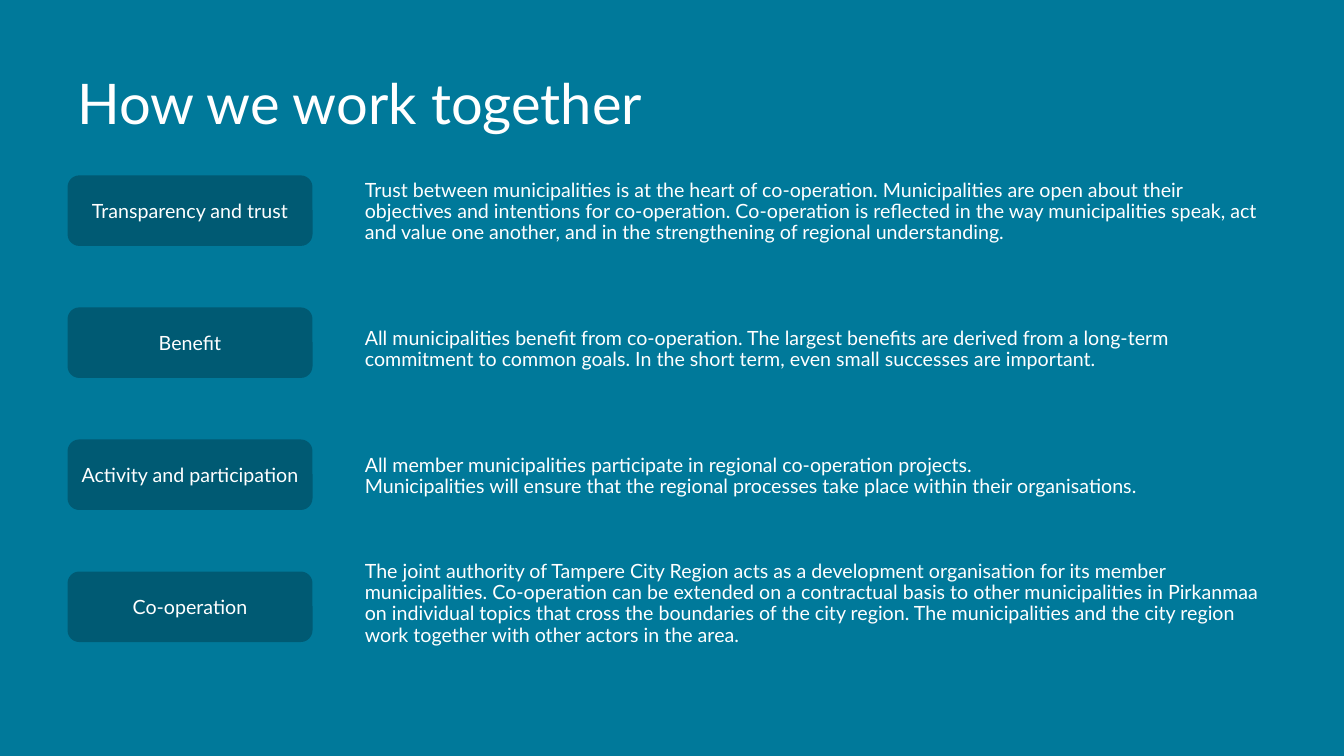
import pptx
import pptx.util
import pptx.dml.color
import pptx.enum.shapes
import pptx.enum.text

Inches = pptx.util.Inches
Pt = pptx.util.Pt
RGBColor = pptx.dml.color.RGBColor
ANCHOR = pptx.enum.text.MSO_ANCHOR

TEAL = RGBColor(0x00, 0x79, 0x9A)
DARK_TEAL = RGBColor(0x00, 0x5A, 0x73)
WHITE = RGBColor(0xFF, 0xFF, 0xFF)

LABEL_HEIGHT = 0.7
LABEL_PITCH = 1.31

# Label, explanation, space before the explanation in points
PRINCIPLES = [
    ("Transparency and trust",
     "Trust between municipalities is at the heart of co-operation. Municipalities are open "
     "about their objectives and intentions for co-operation. Co-operation is reflected in the "
     "way municipalities speak, act and value one another, and in the strengthening of regional "
     "understanding.", 0),
    ("Benefit",
     "All municipalities benefit from co-operation. The largest benefits are derived from a "
     "long-term commitment to common goals. In the short term, even small successes are "
     "important.", 60.5),
    ("Activity and participation",
     "All member municipalities participate in regional co-operation projects. \v"
     "Municipalities will ensure that the regional processes take place within their "
     "organisations.", 60.5),
    ("Co-operation",
     "The joint authority of Tampere City Region acts as a development organisation for its "
     "member municipalities. Co-operation can be extended on a contractual basis to other "
     "municipalities in Pirkanmaa on individual topics that cross the boundaries of the city "
     "region. The municipalities and the city region work together with other actors in the "
     "area.", 45.4),
]


def style(paragraph, size):
    paragraph.font.name = "Lato"
    paragraph.font.size = Pt(size)
    paragraph.font.color.rgb = WHITE


def add_title(slide, left, top, width, height):
    title = slide.shapes.add_textbox(Inches(left), Inches(top), Inches(width), Inches(height))
    frame = title.text_frame
    frame.word_wrap = True
    frame.vertical_anchor = ANCHOR.MIDDLE
    heading = frame.paragraphs[0]
    heading.text = "How we work together"
    heading.line_spacing = 0.9
    style(heading, 40)


def add_labels(slide, left, top, width):
    for row, (name, _, _) in enumerate(PRINCIPLES):
        label = slide.shapes.add_shape(
            pptx.enum.shapes.MSO_SHAPE.ROUNDED_RECTANGLE, Inches(left),
            Inches(top + row * LABEL_PITCH), Inches(width), Inches(LABEL_HEIGHT))
        label.shadow.inherit = False
        label.fill.solid()
        label.fill.fore_color.rgb = DARK_TEAL
        label.line.fill.background()
        frame = label.text_frame
        frame.word_wrap = True
        frame.margin_left = frame.margin_right = Inches(0.05)
        frame.vertical_anchor = ANCHOR.MIDDLE
        caption = frame.paragraphs[0]
        caption.text = name
        caption.alignment = pptx.enum.text.PP_ALIGN.CENTER
        style(caption, 14)


def add_explanations(slide, left, top, width, height):
    body = slide.shapes.add_textbox(Inches(left), Inches(top), Inches(width), Inches(height))
    frame = body.text_frame
    frame.word_wrap = True
    for row, (_, text, gap) in enumerate(PRINCIPLES):
        explanation = frame.add_paragraph() if row else frame.paragraphs[0]
        explanation.text = text
        explanation.line_spacing = 0.9
        if gap:
            explanation.space_before = Pt(gap)
        style(explanation, 14)


def main():
    deck = pptx.Presentation()
    deck.slide_width = Inches(13.33)
    deck.slide_height = Inches(7.5)
    slide = deck.slides.add_slide(deck.slide_layouts[6])
    slide.background.fill.solid()
    slide.background.fill.fore_color.rgb = TEAL

    add_title(slide, 0.67, 0.57, 12.44, 0.97)
    add_explanations(slide, 3.52, 1.74, 9.15, 5.62)
    add_labels(slide, 0.67, 1.74, 2.43)
    deck.save("out.pptx")


if __name__ == "__main__":
    main()
